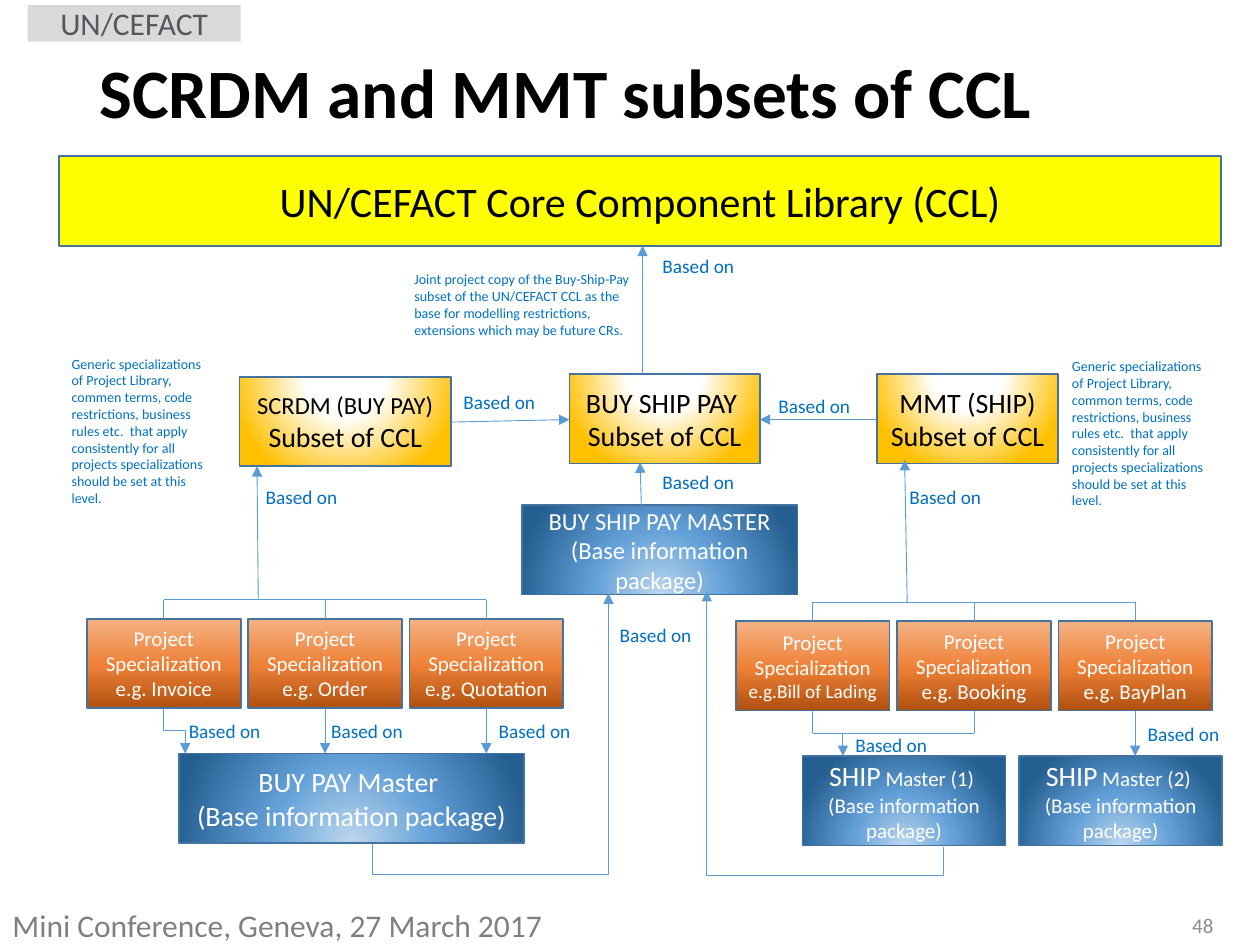
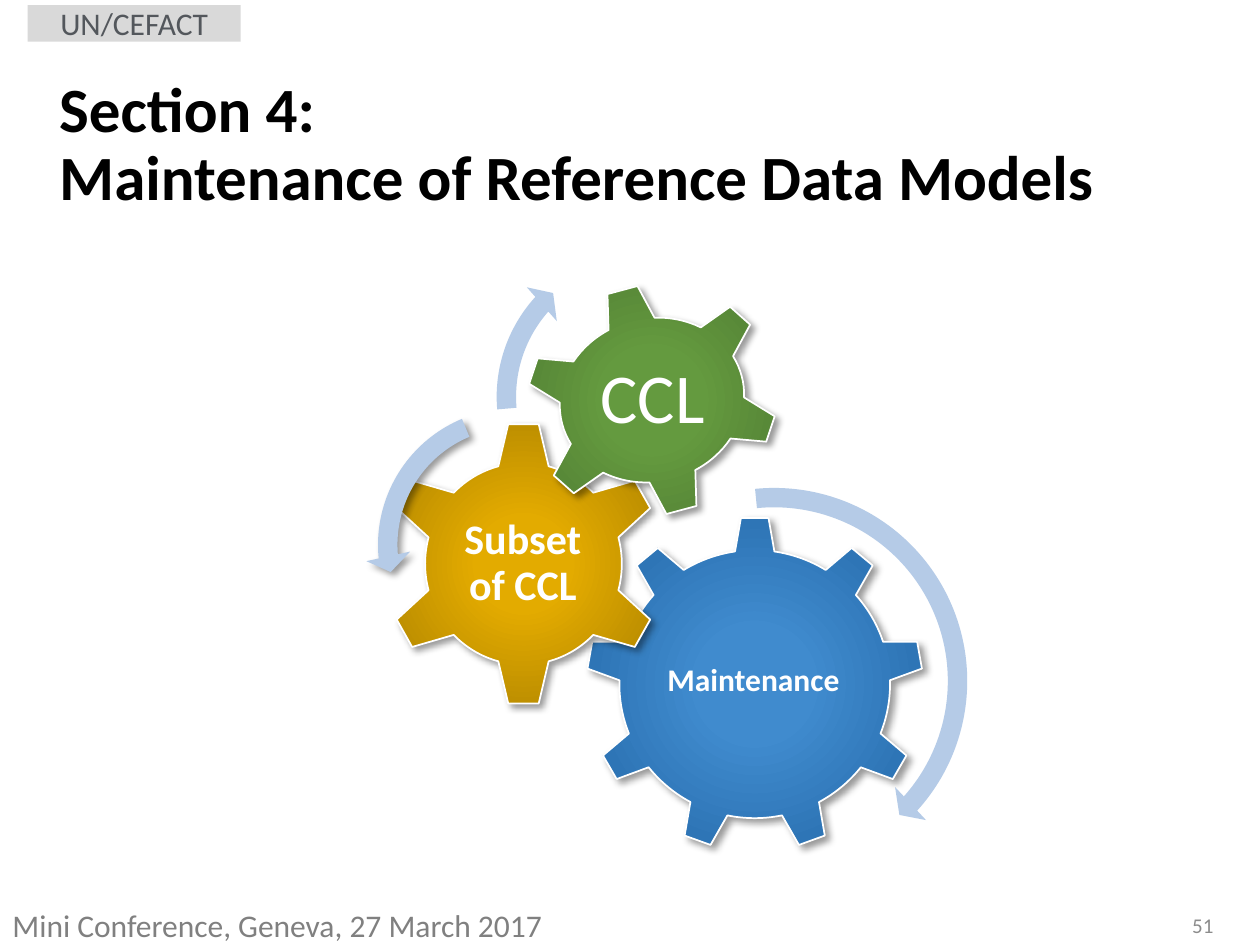
from itertools import chain, repeat

from pptx import Presentation
from pptx.dml.color import RGBColor
from pptx.enum.shapes import MSO_CONNECTOR, MSO_SHAPE
from pptx.enum.text import MSO_ANCHOR, MSO_AUTO_SIZE, PP_ALIGN
from pptx.oxml import parse_xml
from pptx.oxml.ns import nsdecls, qn
from pptx.util import Inches, Pt

LEFT, CENTER, RIGHT = PP_ALIGN.LEFT, PP_ALIGN.CENTER, PP_ALIGN.RIGHT
TOP, MIDDLE = MSO_ANCHOR.TOP, MSO_ANCHOR.MIDDLE
RECTANGLE = MSO_SHAPE.RECTANGLE
GEAR_6, GEAR_9 = MSO_SHAPE.GEAR_6, MSO_SHAPE.GEAR_9
ARC, LEFT_ARC = MSO_SHAPE.CIRCULAR_ARROW, MSO_SHAPE.LEFT_CIRCULAR_ARROW
STRAIGHT, ELBOW = MSO_CONNECTOR.STRAIGHT, MSO_CONNECTOR.ELBOW
FIXED, GROW = MSO_AUTO_SIZE.NONE, MSO_AUTO_SIZE.SHAPE_TO_FIT_TEXT

FONT = "Calibri"
BLACK, WHITE, NOTE_BLUE = "000000", "FFFFFF", "0070C0"
BORDER, ARROW_BLUE, ARC_BLUE = "43739E", "5B9BD5", "B5CBE7"

# Gradients: colour stops, then a linear angle or the rectangle of a circular one
CIRCLE = '<a:path path="circle"><a:fillToRect l="{}000" t="{}000" r="{}000" b="{}000"/></a:path>'
CENTRED = CIRCLE.format(50, 50, 50, 50)
GOLD = ([(0, WHITE), (35, WHITE), (100, "FFC000")], CIRCLE.format(50, -80, 50, 180))
BLUE = ([(0, "BDD7EE"), (46, "63A0D7"), (100, "255E91")], CIRCLE.format(50, 130, 50, -30))
ORANGE = ([(0, "B0500F"), (48, "EE8137"), (100, "F4B183")], '<a:lin ang="16200000" scaled="0"/>')

rgb = RGBColor.from_string


def write(shape, text, size=(12,), color=BLACK, bold=False, align=LEFT, anchor=TOP,
          wrap=True, fit=FIXED, spacing=None, inset=None):
    """Newlines part paragraphs and bars part runs; sizes go run by run, the last one repeating."""
    frame = shape.text_frame
    frame.word_wrap, frame.auto_size, frame.vertical_anchor = wrap, fit, anchor
    if inset is not None:
        frame.margin_left = frame.margin_right = Inches(inset)
        frame.margin_top = frame.margin_bottom = Inches(inset)
    run_sizes = chain(size, repeat(size[-1]))
    for number, line in enumerate(text.split("\n")):
        paragraph = frame.add_paragraph() if number else frame.paragraphs[0]
        paragraph.alignment = align
        if spacing:
            paragraph.line_spacing = spacing
        for words in line.split("|"):
            run = paragraph.add_run()
            run.text = words
            run.font.name, run.font.size, run.font.bold = FONT, Pt(next(run_sizes)), bold
            run.font.color.rgb = rgb(color)


def paint(shape, fill, border=None, shadow=False):
    """Fill with a hex colour or a (stops, direction) gradient."""
    properties = shape.element.spPr
    shape.fill.solid()
    if isinstance(fill, str):
        shape.fill.fore_color.rgb = rgb(fill)
    else:
        stops, direction = fill
        stop_list = "".join(f'<a:gs pos="{share}000"><a:srgbClr val="{color}"/></a:gs>'
                            for share, color in stops)
        gradient = parse_xml(f'<a:gradFill {nsdecls("a")} rotWithShape="1">'
                             f'<a:gsLst>{stop_list}</a:gsLst>{direction}</a:gradFill>')
        properties.replace(properties.find(qn("a:solidFill")), gradient)
    if border:
        shape.line.color.rgb = rgb(border)
        shape.line.width = Pt(1)
    else:
        shape.line.fill.background()
    shape.shadow.inherit = False
    if shadow:
        properties.find(qn("a:effectLst")).append(parse_xml(
            f'<a:outerShdw {nsdecls("a")} blurRad="50800" dist="38100" dir="2700000" '
            'algn="tl" rotWithShape="0"><a:srgbClr val="000000"><a:alpha val="40000"/>'
            '</a:srgbClr></a:outerShdw>'))


prs = Presentation()
prs.slide_width, prs.slide_height = Inches(10), Inches(7.5)

# Title, band, footer and page number of both slides
pages = [
    ("SCRDM and MMT subsets of CCL", 39.6, (0.69, 0.4, 8.62, 0.72), "48"),
    ("Section 4: \nMaintenance of Reference Data Models", 36, (0.37, 0.81, 8.81, 0.7), "51"),
]
for heading, heading_size, heading_area, page_number in pages:
    slide = prs.slides.add_slide(prs.slide_layouts[5])
    title = slide.shapes.title
    title.left, title.top, title.width, title.height = map(Inches, heading_area)
    write(title, heading, size=(heading_size,), bold=True, anchor=MIDDLE, spacing=0.9)
    band = slide.shapes.add_shape(RECTANGLE, *map(Inches, (0.22, 0.04, 1.69, 0.29)))
    paint(band, "D9D9D9")
    write(band, "UN/CEFACT", size=(18,), color="53575C", align=CENTER, anchor=MIDDLE)
    footer = slide.shapes.add_textbox(*map(Inches, (0, 7.14, 5.68, 0.4)))
    write(footer, "Mini Conference, Geneva, 27 March 2017", size=(18,), color="808080")
    number_box = slide.shapes.add_textbox(*map(Inches, (6.73, 7.14, 3, 0.4)))
    write(number_box, page_number, color="8C8C8C", align=RIGHT, anchor=MIDDLE)

subsets_slide, section_slide = prs.slides

# Slide 1: library, subsets, project specializations and masters
BOX_HEIGHT = 0.71
PROJECT_WIDTH, PROJECT_STEP = 1.22, 1.28
BUS_GAP, MASTER_GAP = 0.15, 0.36

# left, top, width, fill, text colour, sizes, text
boxes = [
    (0.47, 1.24, 9.22, "FFFF00", BLACK, (24,), "UN/CEFACT Core Component Library (CCL)"),
    (1.9, 2.99, 1.68, GOLD, BLACK, (14, 16), "SCRDM (BUY PAY)\nSubset of CCL"),
    (4.52, 2.97, 1.51, GOLD, BLACK, (16,), "BUY SHIP PAY \nSubset of CCL"),
    (6.96, 2.97, 1.44, GOLD, BLACK, (16,), "MMT (SHIP)\nSubset of CCL"),
    (4.14, 4.01, 2.19, BLUE, WHITE, (14,), "BUY SHIP PAY MASTER\n(Base information package)"),
    (1.42, 5.98, 2.74, BLUE, WHITE, (16,), "BUY PAY Master \n(Base information package)"),
    (6.37, 6, 1.61, BLUE, WHITE, (16, 12), "SHIP| Master (1) \n(Base information package)"),
    (8.09, 6, 1.61, BLUE, WHITE, (16, 12), "SHIP| Master (2) \n(Base information package)"),
]
# x1, y1, x2, y2, arrowhead, height of the bend
links = [
    (3.58, 3.35, 4.52, 3.33, True, None),
    (6.96, 3.33, 6.03, 3.33, True, None),
    (5.1, 2.97, 5.1, 1.95, True, None),
    (5.09, 4.01, 5.08, 3.67, True, None),
    (2.05, 4.76, 2.04, 3.7, True, None),
    (7.2, 4.78, 7.18, 3.65, True, None),
    (2.96, 6.7, 4.83, 4.71, True, 6.94),
    (7.49, 6.72, 5.61, 4.69, True, 6.95),
    (1.3, 5.62, 1.47, 5.98, True, 5.8),
    (6.45, 5.82, 7.73, 5.82, False, None),
    (6.45, 5.64, 6.45, 5.82, False, None),
    (7.73, 5.64, 7.73, 5.82, False, None),
    (6.69, 5.82, 6.69, 6, True, None),
]

# first column, row, examples, columns with a straight arrow to their master
project_groups = [
    (0.69, 4.91, ["e.g. Invoice", "e.g. Order", "e.g. Quotation"], (1, 2)),
    (5.84, 4.93, ["|e.g.Bill of Lading", "e.g. Booking", "e.g. BayPlan"], (2,)),
]
for group_left, row, examples, direct_columns in project_groups:
    first_middle = group_left + PROJECT_WIDTH / 2
    bus, bottom = row - BUS_GAP, row + BOX_HEIGHT
    links.append((first_middle, bus, first_middle + 2 * PROJECT_STEP, bus, False, None))
    for column, example in enumerate(examples):
        middle = first_middle + column * PROJECT_STEP
        boxes.append((group_left + column * PROJECT_STEP, row, PROJECT_WIDTH, ORANGE, WHITE,
                      (12, 11), f"Project Specialization {example}"))
        links.append((middle, bus, middle, row, False, None))
        if column in direct_columns:
            links.append((middle, bottom, middle, bottom + MASTER_GAP, True, None))

for left, top, width, fill, color, sizes, text in boxes:
    box = subsets_slide.shapes.add_shape(RECTANGLE, *map(Inches, (left, top, width, BOX_HEIGHT)))
    paint(box, fill, BORDER)
    write(box, text, size=sizes, color=color, align=CENTER, anchor=MIDDLE)

for x1, y1, x2, y2, arrowhead, bend in links:
    ends, route = (x1, y1, x2, y2), STRAIGHT
    if bend:
        # An elbow that starts vertically is a horizontal one turned by 90 degrees
        mid_x, mid_y, half_x, half_y = (x1 + x2) / 2, (y1 + y2) / 2, (x2 - x1) / 2, (y2 - y1) / 2
        ends, route = (mid_x - half_y, mid_y + half_x, mid_x + half_y, mid_y - half_x), ELBOW
    link = subsets_slide.shapes.add_connector(route, *map(Inches, ends))
    link.line.color.rgb = rgb(ARROW_BLUE)
    link.line.width = Pt(0.5)
    properties = link.element.spPr
    if bend:
        properties.find(qn("a:xfrm")).set("rot", "5400000")
        share = round((bend - y1) / (y2 - y1) * 100000)
        geometry = properties.find(qn("a:prstGeom"))
        for old_guides in geometry.findall(qn("a:avLst")):
            geometry.remove(old_guides)
        geometry.append(parse_xml(
            f'<a:avLst {nsdecls("a")}><a:gd name="adj1" fmla="val {share}"/></a:avLst>'))
    if arrowhead:
        properties.find(qn("a:ln")).append(parse_xml(f'<a:tailEnd {nsdecls("a")} type="triangle"/>'))
    properties.append(parse_xml(f'<a:effectLst {nsdecls("a")}/>'))

based_on_places = [
    (5.16, 1.97), (3.58, 3.05), (6.08, 3.08), (5.16, 3.68), (2.01, 3.8), (7.12, 3.8),
    (4.82, 4.9), (1.4, 5.66), (2.53, 5.66), (3.86, 5.66), (6.69, 5.77), (9.01, 5.68),
]
for left, top in based_on_places:
    label = subsets_slide.shapes.add_textbox(*map(Inches, (left, top, 0.77, 0.29)))
    write(label, "Based on", size=(11,), color=NOTE_BLUE, wrap=False, fit=GROW)

generic_note = ("Generic specializations of Project Library, {} terms, code restrictions, business "
                "rules etc.  that apply consistently for all projects specializations should be "
                "set at this level.")
joint_note = ("Joint project copy of the Buy-Ship-Pay subset of the UN/CEFACT CCL as the base for "
              "modelling restrictions, extensions which may be future CRs.")
notes = [
    ((3.19, 2.1, 1.95, 0.64), joint_note),
    ((0.47, 2.77, 1.27, 1.31), generic_note.format("commen")),
    ((8.41, 2.79, 1.27, 1.31), generic_note.format("common")),
]
for area, text in notes:
    note = subsets_slide.shapes.add_textbox(*map(Inches, area))
    write(note, text, size=(8,), color=NOTE_BLUE, fit=GROW)

# Slide 2: three gears and the arrows that turn them
# outline, area, rotation, colours from centre to rim, text area, text, size, bold, inset
gears = [
    (GEAR_9, (4.65, 4.1, 2.68, 2.66), 0, ("408BCE", "408BCE", "2E75B6", "2B6DA9"),
     (5.18, 4.72, 1.6, 1.37), "Maintenance", 18, True, 0.03),
    (GEAR_6, (3.04, 3.34, 2.23, 2.27), 0, ("E3AB00", "E3AB00", "BF9000", "B28600"),
     (3.6, 3.91, 1.1, 1.13), "Subset of CCL", 24, True, 0.03),
    (GEAR_6, (4.16, 2.25, 2.03, 1.85), 345, ("649A3F", "649A3F", "548235", "4E7932"),
     (4.62, 2.65, 1.12, 1.06), "CCL", 40, False, 0.06),
]
for outline, area, rotation, colors, text_area, text, size, bold, inset in gears:
    gear = section_slide.shapes.add_shape(outline, *map(Inches, area))
    gear.rotation = rotation
    paint(gear, (list(zip((0, 23, 69, 97), colors)), CENTRED), WHITE, shadow=True)
    gear_text = section_slide.shapes.add_textbox(*map(Inches, text_area))
    write(gear_text, text, size=(size,), color=WHITE, bold=bold, align=CENTER, anchor=MIDDLE,
          spacing=0.9, inset=inset)

# outline, left, top, side, adjustments, shadow
turns = [
    (ARC, 4.51, 3.77, 3.27, (0.047, 2.99, 25.173, 158.587, 0.055), False),
    (LEFT_ARC, 2.9, 3.14, 2.37, (0.065, 4.3, 104.891, 148.378, 0.075), True),
    (ARC, 3.84, 1.87, 2.56, (0.06, 3.941, 133.138, 105.082, 0.07), False),
]
for outline, left, top, side, adjustments, shadow in turns:
    turn = section_slide.shapes.add_shape(outline, *map(Inches, (left, top, side, side)))
    for index, value in enumerate(adjustments):
        turn.adjustments[index] = value
    paint(turn, ARC_BLUE, shadow=shadow)

prs.save("out.pptx")
